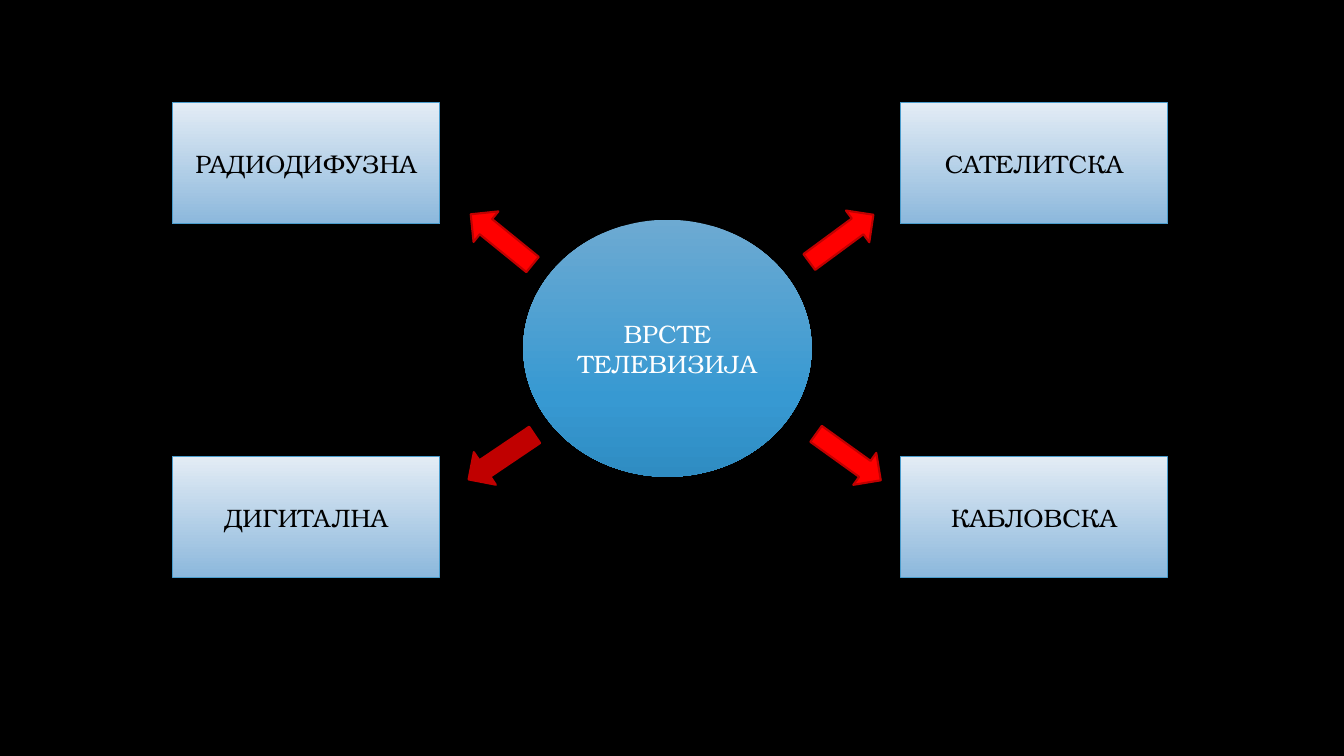
import copy

import pptx
import pptx.dml.color
import pptx.enum.shapes
import pptx.enum.text
import pptx.oxml.ns
import pptx.util

Inches = pptx.util.Inches
SHAPES = pptx.enum.shapes.MSO_SHAPE


def colour(value):
    return pptx.dml.color.RGBColor.from_string(value)


class Diagram:
    """Draws the styled elements of a hub-and-branches diagram on one slide."""

    font = "TeX Gyre Bonum"
    size = 18
    branch_stops = [(0, "E3ECF5"), (1, "8CB8DC")]
    hub_stops = [(0, "6DAAD2"), (0.69, "3799D2"), (1, "2F8CC2")]

    def __init__(self, slide, background):
        self.slide = slide
        slide.background.fill.solid()
        slide.background.fill.fore_color.rgb = colour(background)

    def outline(self, kind, left, top, width, height, line=None, weight=1):
        shape = self.slide.shapes.add_shape(
            kind, Inches(left), Inches(top), Inches(width), Inches(height))
        shape.shadow.inherit = False
        if line:
            shape.line.color.rgb = colour(line)
            shape.line.width = pptx.util.Pt(weight)
        else:
            shape.line.fill.background()
        return shape

    def gradient(self, shape, stops):
        shape.fill.gradient()
        shape.fill.gradient_angle = 270
        stop_list = shape._element.spPr.find(".//" + pptx.oxml.ns.qn("a:gsLst"))
        for _ in stops[2:]:
            stop_list.append(copy.deepcopy(stop_list[0]))
        for stop, (position, value) in zip(shape.fill.gradient_stops, stops):
            stop.position = position
            stop.color.rgb = colour(value)

    def label(self, shape, text, value):
        frame = shape.text_frame
        frame.word_wrap = True
        frame.vertical_anchor = pptx.enum.text.MSO_ANCHOR.MIDDLE
        paragraph = frame.paragraphs[0]
        paragraph.alignment = pptx.enum.text.PP_ALIGN.CENTER
        run = paragraph.add_run()
        run.text = text
        run.font.name = self.font
        run.font.size = pptx.util.Pt(self.size)
        run.font.color.rgb = colour(value)

    def hub(self, text, left, top, width, height):
        circle = self.outline(SHAPES.OVAL, left, top, width, height)
        self.gradient(circle, self.hub_stops)
        self.label(circle, text, "FFFFFF")

    def branch(self, text, left, top):
        box = self.outline(SHAPES.RECTANGLE, left, top, 2.65, 1.2, "4A9CCC")
        self.gradient(box, self.branch_stops)
        self.label(box, text, "000000")

    def arrow(self, left, top, rotation, fill):
        pointer = self.outline(SHAPES.UP_ARROW, left, top, 0.39, 0.79, "C00000", 1.5)
        pointer.fill.solid()
        pointer.fill.fore_color.rgb = colour(fill)
        pointer.rotation = rotation


def main():
    presentation = pptx.Presentation()
    presentation.slide_width = Inches(13.33)
    presentation.slide_height = Inches(7.5)
    slide = presentation.slides.add_slide(presentation.slide_layouts[6])
    diagram = Diagram(slide, "000000")

    diagram.hub("ВРСТЕ ТЕЛЕВИЗИЈА", 5.19, 2.18, 2.86, 2.55)

    television_kinds = [["РАДИОДИФУЗНА", "САТЕЛИТСКА"], ["ДИГИТАЛНА", "КАБЛОВСКА"]]
    for top, row in zip((1.02, 4.53), television_kinds):
        for left, kind in zip((1.71, 8.93), row):
            diagram.branch(kind, left, top)

    for left, top, rotation, fill in [
        (4.78, 1.98, 309.1, "FF0000"),
        (4.78, 4.14, 236, "C00000"),
        (8.15, 1.97, 53.6, "FF0000"),
        (8.22, 4.14, 125.7, "FF0000"),
    ]:
        diagram.arrow(left, top, rotation, fill)

    presentation.save("out.pptx")


if __name__ == "__main__":
    main()
